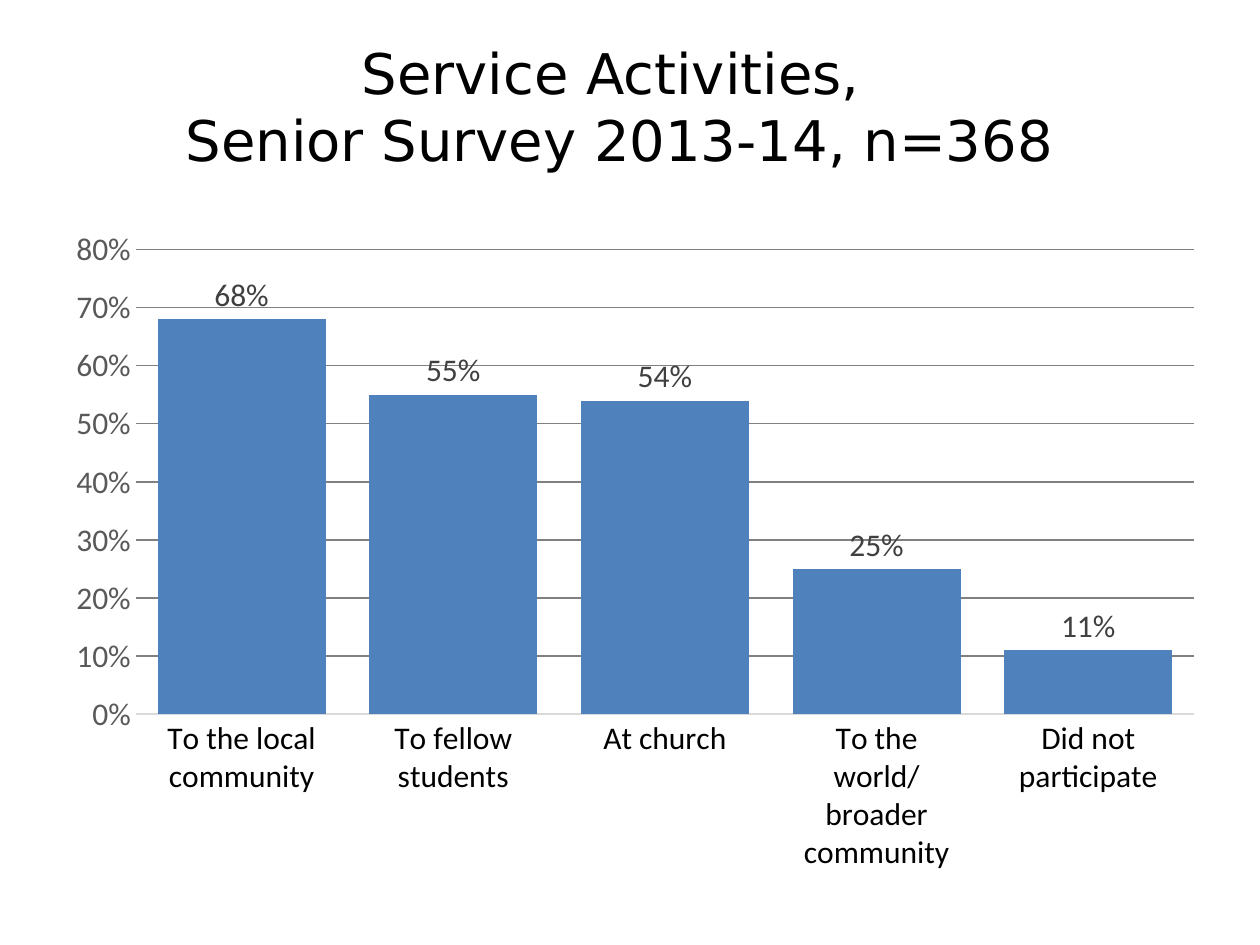
from lxml import etree
from pptx import Presentation
from pptx.chart.data import CategoryChartData
from pptx.dml.color import RGBColor
from pptx.enum.chart import XL_CHART_TYPE, XL_LABEL_POSITION, XL_TICK_MARK
from pptx.enum.text import MSO_ANCHOR, MSO_AUTO_SIZE, PP_ALIGN
from pptx.oxml.ns import qn
from pptx.util import Inches, Pt

COLUMNS = XL_CHART_TYPE.COLUMN_CLUSTERED
OUTSIDE = XL_LABEL_POSITION.OUTSIDE_END
NO_TICK = XL_TICK_MARK.NONE
CENTER = PP_ALIGN.CENTER
MIDDLE = MSO_ANCHOR.MIDDLE
NO_FIT = MSO_AUTO_SIZE.NONE

TITLE_ONLY = 5
COLORS = {
    "text": "000000",
    "scale": "595959",
    "label": "404040",
    "bar": "4F81BD",
    "grid": "808080",
    "baseline": "D9D9D9",
}
TITLE_LINES = ["Service Activities, ", "Senior Survey 2013-14, n=368"]
PARTICIPATION = {
    "To the local community": 0.68,
    "To fellow students": 0.55,
    "At church": 0.54,
    "To the world/broader community": 0.25,
    "Did not participate": 0.11,
}
PLOT_AREA = {"x": 0.063, "y": 0.03, "w": 0.916, "h": 0.727}


def rgb(name):
    return RGBColor.from_string(COLORS[name])


def style_font(font, name, size, color):
    font.name = name
    font.size = Pt(size)
    font.bold = False
    font.color.rgb = rgb(color)


def style_line(line, color):
    line.color.rgb = rgb(color)
    line.width = Pt(0.75)


def add_title(slide, left, top, width, height):
    sp = slide.shapes.title
    sp.left, sp.top, sp.width, sp.height = left, top, width, height
    tf = sp.text_frame
    tf.word_wrap = True
    tf.auto_size = NO_FIT
    tf.vertical_anchor = MIDDLE
    for i, line in enumerate(TITLE_LINES):
        p = tf.add_paragraph() if i else tf.paragraphs[0]
        p.alignment = CENTER
        r = p.add_run()
        r.text = line
        style_font(r.font, "DejaVu Sans", 32, "text")


def set_plot_area(chart):
    """Fix the inner plot area as fractions of the chart frame."""
    plot_area = chart.plots[0]._element.getparent()
    for old in plot_area.findall(qn("c:layout")):
        plot_area.remove(old)
    layout = etree.Element(qn("c:layout"))
    manual = etree.SubElement(layout, qn("c:manualLayout"))
    settings = {"layoutTarget": "inner", "xMode": "edge", "yMode": "edge", **PLOT_AREA}
    for tag, value in settings.items():
        etree.SubElement(manual, qn(f"c:{tag}")).set("val", str(value))
    plot_area.insert(0, layout)


def style_axes(chart):
    for axis, color in ((chart.category_axis, "text"), (chart.value_axis, "scale")):
        axis.major_tick_mark = axis.minor_tick_mark = NO_TICK
        style_font(axis.tick_labels.font, "Calibri", 18, color)
    style_line(chart.category_axis.format.line, "baseline")

    scale = chart.value_axis
    scale.minimum_scale, scale.maximum_scale, scale.major_unit = 0, 0.8, 0.1
    scale.tick_labels.number_format = "0%"
    scale.tick_labels.number_format_is_linked = False
    scale.format.line.fill.background()
    style_line(scale.major_gridlines.format.line, "grid")


def style_bars(plot):
    plot.gap_width = 26
    plot.overlap = -27
    plot.vary_by_categories = False
    fill = plot.series[0].format.fill
    fill.solid()
    fill.fore_color.rgb = rgb("bar")
    labels = plot.series[0].data_labels
    labels.show_value = True
    labels.position = OUTSIDE
    labels.number_format = "0%"
    labels.number_format_is_linked = False
    style_font(labels.font, "Calibri", 18, "label")


def add_participation_chart(slide, left, top, width, height):
    data = CategoryChartData(number_format="0%")
    data.categories = list(PARTICIPATION)
    data.add_series("Series 1", list(PARTICIPATION.values()))
    chart = slide.shapes.add_chart(COLUMNS, left, top, width, height, data).chart
    chart.has_title = False
    chart.has_legend = False
    style_font(chart.font, "Calibri", 18, "text")
    set_plot_area(chart)
    style_axes(chart)
    style_bars(chart.plots[0])


def main():
    prs = Presentation()
    prs.slide_width, prs.slide_height = Inches(10), Inches(7.5)
    slide = prs.slides.add_slide(prs.slide_layouts[TITLE_ONLY])
    add_title(slide, Inches(0.92), Inches(0.25), Inches(8), Inches(1.18))
    add_participation_chart(slide, Inches(0.5), Inches(1.83), Inches(9.17), Inches(5.07))
    prs.save("out.pptx")


if __name__ == "__main__":
    main()
